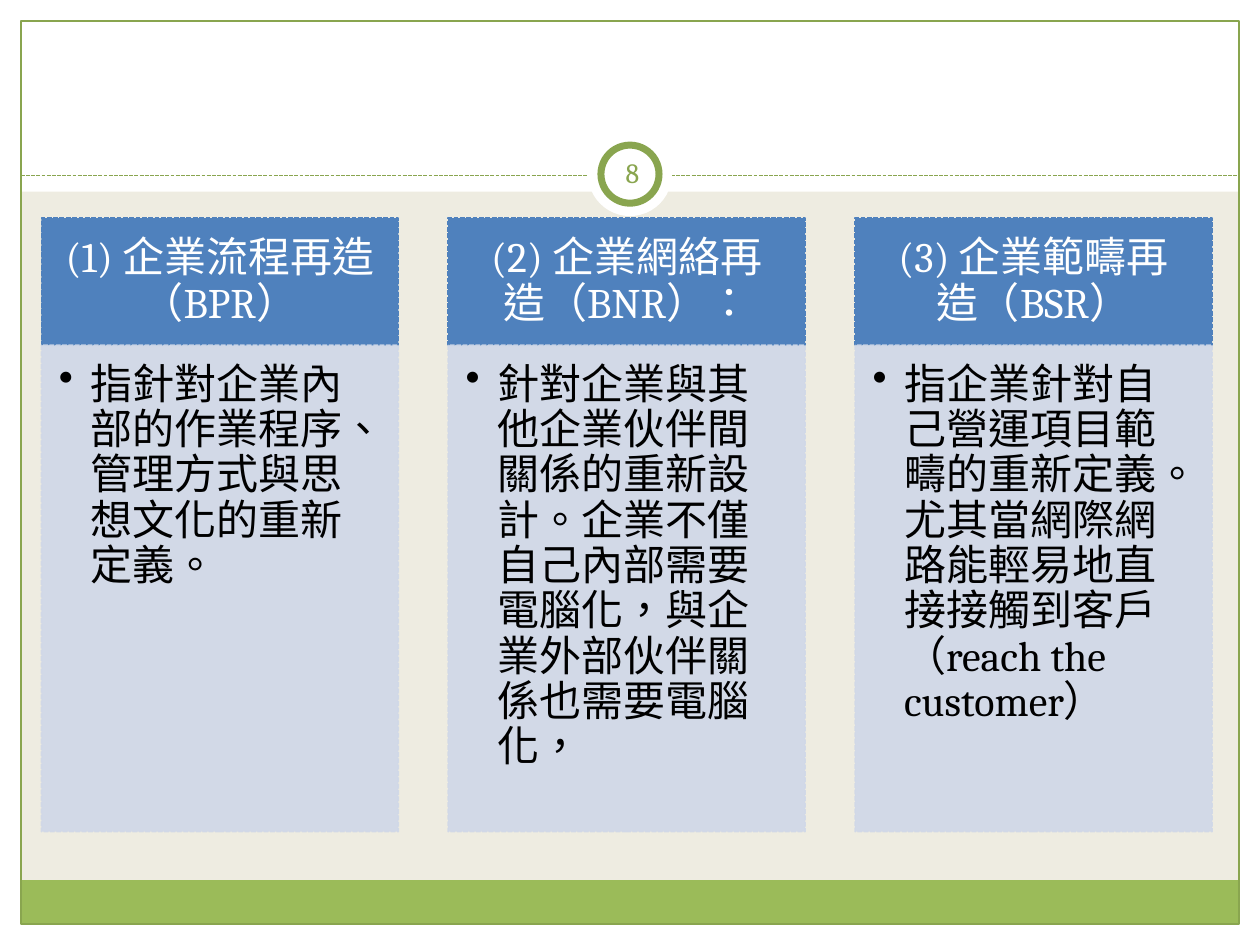
import pptx
import pptx.util
import pptx.dml.color
import pptx.enum.dml
import pptx.enum.lang
import pptx.enum.shapes
import pptx.enum.text
import pptx.oxml
import pptx.oxml.ns
import lxml.etree

Pt = pptx.util.Pt
SHAPES = pptx.enum.shapes.MSO_SHAPE
ALIGN = pptx.enum.text.PP_ALIGN
ANCHOR = pptx.enum.text.MSO_ANCHOR
COLOURS = {
    "background": "EEECE1", "white": "FFFFFF", "black": "000000",
    "band": "9BBB59", "frame": "89A54F", "header": "4F81BD", "body": "D0D8E8",
}


def rgb(name):
    return pptx.dml.color.RGBColor.from_string(COLOURS[name])


def add_child(parent, tag, **attributes):
    child = lxml.etree.SubElement(parent, pptx.oxml.ns.qn(tag))
    for key, value in attributes.items():
        child.set(key, value)
    return child


def write_text(shape, text, size=24, colour="black", font="Cambria", align=ALIGN.LEFT,
               anchor=ANCHOR.TOP, insets=(0, 0, 0, 0), spacing=1.0, bullet_indent=None):
    frame = shape.text_frame
    frame.word_wrap = True
    frame.vertical_anchor = anchor
    (frame.margin_left, frame.margin_top,
     frame.margin_right, frame.margin_bottom) = [Pt(inset) for inset in insets]
    paragraph = frame.paragraphs[0]
    paragraph.alignment = align
    paragraph.line_spacing = spacing
    if bullet_indent:
        paragraph.level = 1
        properties = paragraph._p.get_or_add_pPr()
        properties.set("marL", str(Pt(bullet_indent)))
        properties.set("indent", str(-Pt(bullet_indent)))
        add_child(properties, "a:buChar", char="•")
    run = paragraph.add_run()
    run.text = text
    run.font.name = font
    run.font.size = Pt(size)
    run.font.color.rgb = rgb(colour)
    run.font.language_id = pptx.enum.lang.MSO_LANGUAGE_ID.TRADITIONAL_CHINESE


class SlideBuilder:
    dash = pptx.enum.dml.MSO_LINE.SQUARE_DOT  # sysDot, replaced by sysDash below

    def __init__(self, slide):
        self.slide = slide
        slide.background.fill.solid()
        slide.background.fill.fore_color.rgb = rgb("background")

    def outline(self, line, colour, width, dashed=False):
        line.color.rgb = rgb(colour)
        line.width = Pt(width)
        if dashed:
            line.dash_style = self.dash
            line._ln.find(pptx.oxml.ns.qn("a:prstDash")).set("val", "sysDash")

    def shape(self, left, top, width, height, kind=SHAPES.RECTANGLE, fill=None,
              line=None, line_width=0.75, dashed=False, opacity=None):
        shape = self.slide.shapes.add_shape(kind, Pt(left), Pt(top), Pt(width), Pt(height))
        shape.shadow.inherit = False
        if fill:
            shape.fill.solid()
            shape.fill.fore_color.rgb = rgb(fill)
        else:
            shape.fill.background()
        if line:
            self.outline(shape.line, line, line_width, dashed)
        else:
            shape.line.fill.background()
        if opacity:
            for colour in shape._element.spPr.iter(pptx.oxml.ns.qn("a:srgbClr")):
                add_child(colour, "a:alpha", val=str(opacity * 1000))
        return shape

    def rule(self, left, right, y, colour):
        rule = self.slide.shapes.add_connector(
            pptx.enum.shapes.MSO_CONNECTOR.STRAIGHT, Pt(left), Pt(y), Pt(right), Pt(y))
        self.outline(rule.line, colour, 0.75, dashed=True)
        add_child(rule._element.spPr, "a:effectLst")

    def text(self, left, top, width, height, text, **style):
        box = self.slide.shapes.add_textbox(Pt(left), Pt(top), Pt(width), Pt(height))
        write_text(box, text, **style)

    def card(self, left, top, width, header_height, body_height, title, description):
        header = self.shape(left, top, width, header_height, fill="header",
                            line="header", line_width=0.9, dashed=True)
        write_text(header, title, colour="white", align=ALIGN.CENTER, anchor=ANCHOR.MIDDLE,
                   insets=(13.5, 8, 13.5, 8), spacing=0.9)
        body = self.shape(left, top + header_height, width, body_height, fill="body",
                          line="body", line_width=0.9, dashed=True, opacity=90)
        write_text(body, description, insets=(10, 10, 13.5, 15), spacing=0.9,
                   bullet_indent=18)


def main():
    presentation = pptx.Presentation()
    width, height, margin = 720, 540, 12
    presentation.slide_width, presentation.slide_height = Pt(width), Pt(height)
    builder = SlideBuilder(presentation.slides.add_slide(presentation.slide_layouts[6]))

    # White margins and title area
    for area in [(0, height - margin, width, margin), (0, 0, width, 109.5),
                 (0, 0, margin, height), (width - margin, 0, margin, height)]:
        builder.shape(*area, fill="white")

    # Footer band, frame and dashed rule
    inner_width = width - 2 * margin
    builder.shape(margin, 503, inner_width, 25, fill="band")
    builder.shape(margin, margin, inner_width, height - 2 * margin, line="frame")
    builder.rule(margin, width - margin, 100.5, "frame")

    # Page number badge
    builder.shape(336, 75.5, 48, 48, SHAPES.OVAL, fill="white")
    builder.shape(343.4, 82.9, 33.2, 33.2, SHAPES.OVAL, fill="white",
                  line="frame", line_width=4)
    builder.text(343.4, 81, 36, 34.5, "8", size=16, colour="frame", align=ALIGN.CENTER,
                 anchor=ANCHOR.MIDDLE, insets=(3.6, 3.6, 3.6, 3.6))

    # Three kinds of reengineering
    cards = [
        ("(1) 企業流程再造（BPR）",
         "指針對企業內部的作業程序、管理方式與思想文化的重新定義。"),
        ("(2) 企業網絡再造（BNR）：",
         "針對企業與其他企業伙伴間關係的重新設計。企業不僅自己內部需要電腦化，"
         "與企業外部伙伴關係也需要電腦化，"),
        ("(3) 企業範疇再造（BSR）",
         "指企業針對自己營運項目範疇的重新定義。尤其當網際網路能輕易地直接接觸到客戶"
         "（reach the customer）"),
    ]
    for index, (title, description) in enumerate(cards):
        builder.card(23.6 + index * 232.5, 124.6, 204, 72.7, 278, title, description)

    presentation.save("out.pptx")


if __name__ == "__main__":
    main()
